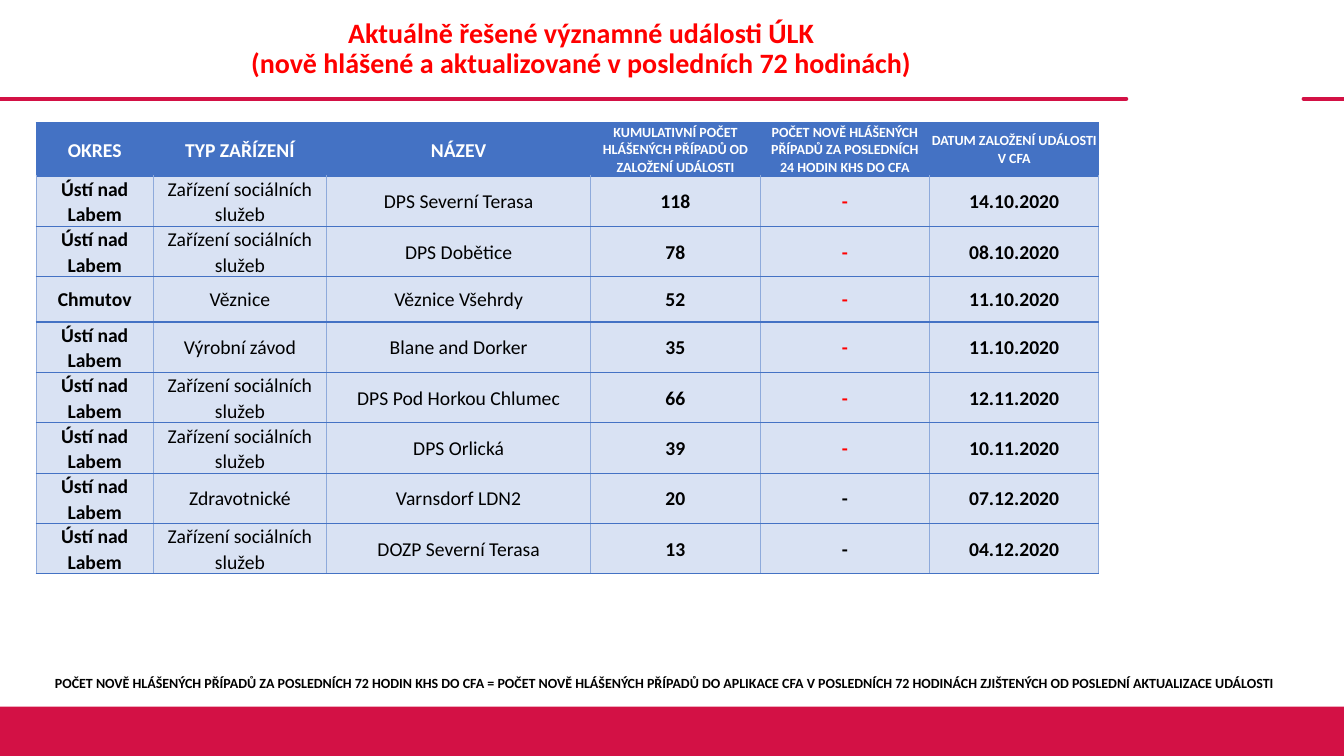
from lxml import etree
from pptx import Presentation
from pptx.dml.color import RGBColor
from pptx.enum.shapes import MSO_CONNECTOR, MSO_SHAPE
from pptx.enum.text import MSO_ANCHOR, PP_ALIGN
from pptx.oxml.ns import qn
from pptx.util import Inches, Pt

STRAIGHT = MSO_CONNECTOR.STRAIGHT
RECTANGLE = MSO_SHAPE.RECTANGLE
MIDDLE, TOP = MSO_ANCHOR.MIDDLE, MSO_ANCHOR.TOP
CENTER = PP_ALIGN.CENTER

# Content
TITLE = ["Aktuálně řešené významné události ÚLK",
         "(nově hlášené a aktualizované v posledních 72 hodinách)"]
FOOTNOTE = ("POČET NOVĚ HLÁŠENÝCH PŘÍPADŮ ZA POSLEDNÍCH 72 HODIN KHS DO CFA = "
            "POČET NOVĚ HLÁŠENÝCH PŘÍPADŮ DO APLIKACE CFA V POSLEDNÍCH 72 HODINÁCH "
            "ZJIŠTENÝCH OD POSLEDNÍ AKTUALIZACE UDÁLOSTI")
USTI = "Ústí nad Labem"
SOCIAL = "Zařízení sociálních služeb"
# Heading, column width, size key, side margin
COLUMNS = [
    ("OKRES", 1.16, "body", 0.06),
    ("TYP ZAŘÍZENÍ", 1.72, "body", 0.06),
    ("NÁZEV", 2.62, "body", 0.06),
    ("KUMULATIVNÍ POČET HLÁŠENÝCH PŘÍPADŮ OD ZALOŽENÍ UDÁLOSTI", 1.68, "small", 0),
    ("POČET NOVĚ HLÁŠENÝCH PŘÍPADŮ ZA POSLEDNÍCH 24 HODIN KHS DO CFA", 1.68, "small", 0.05),
    ("DATUM ZALOŽENÍ UDÁLOSTI V CFA", 1.68, "small", 0),
]
# District, facility type, name, cases, date, dash in red
EVENTS = [
    (USTI, SOCIAL, "DPS Severní Terasa", 118, "14.10.2020", True),
    (USTI, SOCIAL, "DPS Dobětice", 78, "08.10.2020", True),
    ("Chmutov", "Věznice", "Věznice Všehrdy", 52, "11.10.2020", True),
    (USTI, "Výrobní závod", "Blane and Dorker", 35, "11.10.2020", True),
    (USTI, SOCIAL, "DPS Pod Horkou Chlumec", 66, "12.11.2020", True),
    (USTI, SOCIAL, "DPS Orlická", 39, "10.11.2020", True),
    (USTI, "Zdravotnické", "Varnsdorf LDN2", 20, "07.12.2020", False),
    (USTI, SOCIAL, "DOZP Severní Terasa", 13, "04.12.2020", False),
]

THEME = {
    "font": "Calibri",
    "title": 20, "body": 14, "small": 10,
    "crimson": "D31145", "red": "FF0000", "black": "000000", "white": "FFFFFF",
    "header": "4472C4", "row": "D9E2F3", "side": "8EAADB",
}
SLIDE_W, SLIDE_H = 13.33, 7.5
RULE_Y, FOOTER_H = 0.98, 0.49
TABLE_X, TABLE_Y = 0.36, 1.22
HEADER_H, ROW_H = 0.43, 0.45


def color(key):
    return RGBColor.from_string(THEME[key])


def write(tf, lines, size, ink, bold=True, spacing=1.07):
    p = tf.paragraphs[0]
    p.alignment, p.line_spacing = CENTER, spacing
    for i, line in enumerate(lines):
        if i:
            p.add_line_break()
        r = p.add_run()
        r.text = line
        r.font.name, r.font.size, r.font.bold = THEME["font"], Pt(THEME[size]), bold
        r.font.color.rgb = color(ink)


def add_text(slide, box, lines, size, ink, anchor, spacing):
    tf = slide.shapes.add_textbox(*map(Inches, box)).text_frame
    tf.word_wrap, tf.vertical_anchor = True, anchor
    write(tf, lines, size, ink, spacing=spacing)


def add_rule(slide, x1, x2):
    line = slide.shapes.add_connector(
        STRAIGHT, Inches(x1), Inches(RULE_Y), Inches(x2), Inches(RULE_Y))
    line.line.color.rgb, line.line.width = color("crimson"), Pt(3)
    sp_pr = line._element.spPr
    sp_pr.find(qn("a:ln")).set("cap", "rnd")
    etree.SubElement(sp_pr, qn("a:effectLst"))


def style_cell(cell, fill, side, margin):
    cell.vertical_anchor = MIDDLE
    cell.margin_left = cell.margin_right = Inches(margin)
    cell.margin_top = cell.margin_bottom = 0
    cell.fill.solid()
    cell.fill.fore_color.rgb = color(fill)
    tc_pr = cell._tc.get_or_add_tcPr()
    edges = [("a:lnL", side), ("a:lnR", side), ("a:lnT", "header"), ("a:lnB", "header")]
    for i, (tag, key) in enumerate(edges):
        ln = etree.Element(qn(tag), w=str(Pt(1)))
        solid = etree.SubElement(ln, qn("a:solidFill"))
        etree.SubElement(solid, qn("a:srgbClr"), val=THEME[key])
        tc_pr.insert(i, ln)


def add_events_table(slide):
    width = sum(col[1] for col in COLUMNS)
    height = HEADER_H + ROW_H * len(EVENTS)
    table = slide.shapes.add_table(
        len(EVENTS) + 1, len(COLUMNS), Inches(TABLE_X), Inches(TABLE_Y),
        Inches(width), Inches(height)).table
    table.horz_banding = False
    for i, row in enumerate(table.rows):
        row.height = Inches(ROW_H if i else HEADER_H)

    # Header row
    for c, (heading, col_w, size, margin) in enumerate(COLUMNS):
        table.columns[c].width = Inches(col_w)
        cell = table.cell(0, c)
        style_cell(cell, "header", "header", margin)
        write(cell.text_frame, [heading], size, "white",
              spacing=1.05 if size == "small" else 1.07)

    # Event rows
    for i, (district, kind, name, cases, date, red_dash) in enumerate(EVENTS, 1):
        dash_ink = "red" if red_dash else "black"
        for c, value in enumerate((district, kind, name, str(cases), "-", date)):
            cell = table.cell(i, c)
            style_cell(cell, "row", "side", 0.07)
            write(cell.text_frame, [value], "body", dash_ink if c == 4 else "black",
                  bold=c not in (1, 2))


def main():
    prs = Presentation()
    prs.slide_width, prs.slide_height = Inches(SLIDE_W), Inches(SLIDE_H)
    slide = prs.slides.add_slide(prs.slide_layouts[6])

    # Rules and footer band
    add_rule(slide, 0, 11.17)
    add_rule(slide, 12.93, SLIDE_W)
    band = slide.shapes.add_shape(
        RECTANGLE, 0, Inches(SLIDE_H - FOOTER_H), Inches(SLIDE_W), Inches(FOOTER_H))
    band.shadow.inherit = False
    band.fill.solid()
    band.fill.fore_color.rgb = color("crimson")
    band.line.fill.background()

    # Title, footnote and table
    add_text(slide, (0.36, 0, 10.81, RULE_Y), TITLE, "title", "red", MIDDLE, 0.9)
    add_text(slide, (0, 6.63, 13.17, 0.27), [FOOTNOTE], "small", "black", TOP, 1.05)
    add_events_table(slide)
    prs.save("out.pptx")


if __name__ == "__main__":
    main()
